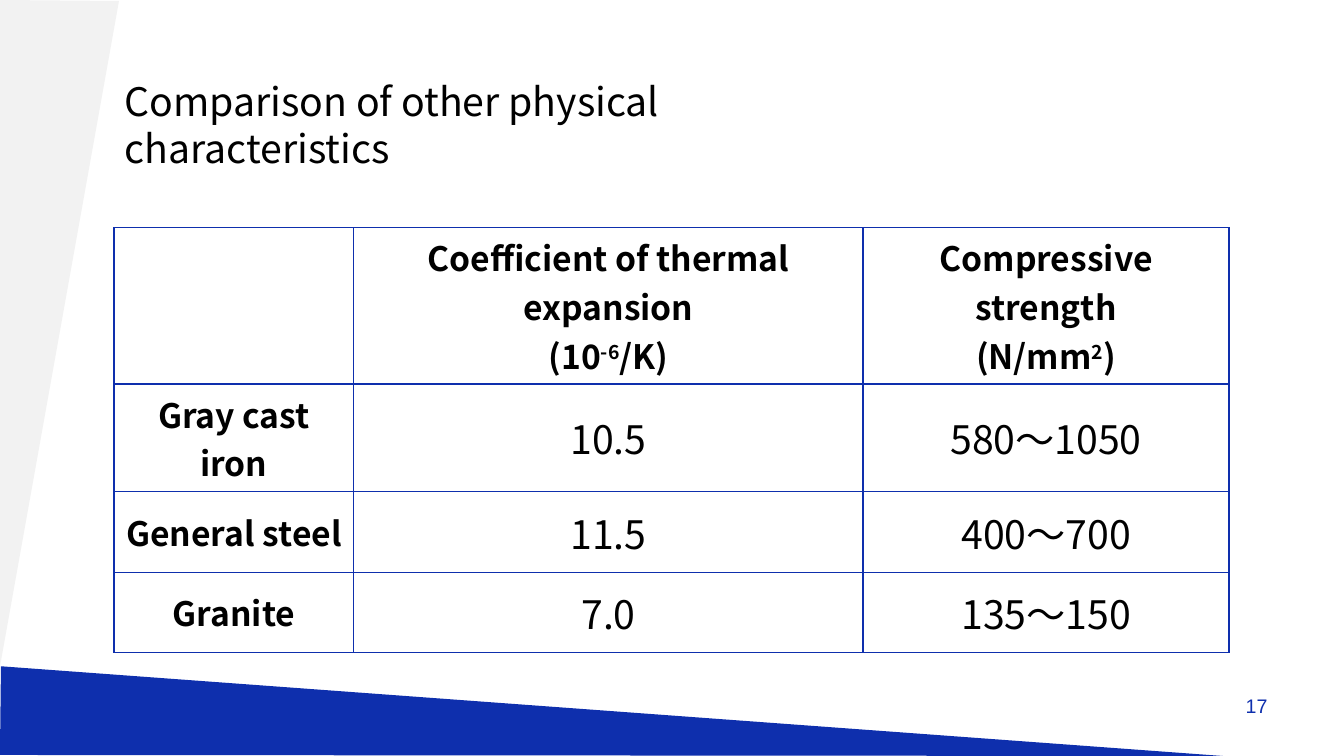
from dataclasses import dataclass

from lxml import etree
from pptx import Presentation
from pptx import util as u
from pptx.dml.color import RGBColor
from pptx.enum import text
from pptx.oxml import ns


@dataclass(frozen=True)
class Theme:
    blue: str = "0E2FAD"
    gray: str = "F2F2F2"
    ink: str = "000000"
    font: str = "Noto Sans CJK JP"
    plain: str = "Arial"
    big: int = 28
    head: int = 24
    small: int = 14
    line: int = 1


class Page:
    def __init__(self, deck, theme):
        self.theme = theme
        self.slide = deck.slides.add_slide(deck.slide_layouts[6])

    def run(self, para, words, size, color, font, bold=False, base=0):
        run = para.add_run()
        run.text = words
        run.font.size = u.Pt(size)
        run.font.bold = bold
        run.font.name = font
        run.font.color.rgb = RGBColor.from_string(color)
        props = run._r.get_or_add_rPr()
        east = etree.Element(ns.qn("a:ea"), typeface=font)
        props.find(ns.qn("a:latin")).addnext(east)
        if base:
            props.set("baseline", str(base * 1000))

    def wedge(self, points, color):
        start, *rest = [(u.Inches(x), u.Inches(y)) for x, y in points]
        pen = self.slide.shapes.build_freeform(*start)
        pen.add_line_segments(rest, close=True)
        shape = pen.convert_to_shape()
        shape.shadow.inherit = False
        shape.fill.solid()
        shape.fill.fore_color.rgb = RGBColor.from_string(color)
        shape.line.fill.background()

    def label(self, box, words, size, color, font,
              align=text.PP_ALIGN.LEFT):
        shape = self.slide.shapes.add_textbox(*map(u.Inches, box))
        frame = shape.text_frame
        frame.word_wrap = True
        para = frame.paragraphs[0]
        para.alignment = align
        self.run(para, words, size, color, font)

    def border(self, cell):
        props = cell._tc.get_or_add_tcPr()
        for spot, side in enumerate(("lnL", "lnR", "lnT", "lnB")):
            line = etree.Element(ns.qn(f"a:{side}"), w=str(u.Pt(self.theme.line)))
            fill = etree.SubElement(line, ns.qn("a:solidFill"))
            etree.SubElement(fill, ns.qn("a:srgbClr"), val=self.theme.blue)
            props.insert(spot, line)

    def cell(self, cell, lines, bold):
        cell.fill.background()
        cell.vertical_anchor = text.MSO_ANCHOR.MIDDLE
        self.border(cell)
        size = self.theme.head if bold else self.theme.big
        frame = cell.text_frame
        for spot, parts in enumerate(lines):
            para = frame.add_paragraph() if spot else frame.paragraphs[0]
            para.alignment = text.PP_ALIGN.CENTER
            for words, base in parts:
                self.run(para, words, size, self.theme.ink, self.theme.font,
                         bold, base)

    def table(self, left, top, cols, rows, data):
        box = map(u.Inches, (left, top, sum(cols), sum(rows)))
        grid = self.slide.shapes.add_table(len(rows), len(cols), *box).table
        grid.first_row = grid.horz_banding = False
        for col, width in zip(grid.columns, cols):
            col.width = u.Inches(width)
        for row, high in zip(grid.rows, rows):
            row.height = u.Inches(high)
        for r, line in enumerate(data):
            for c, lines in enumerate(line):
                self.cell(grid.cell(r, c), lines, bold=r == 0 or c == 0)


def main():
    deck = Presentation()
    deck.slide_width, deck.slide_height = u.Inches(13.33), u.Inches(7.5)
    theme = Theme()
    page = Page(deck, theme)

    # Background wedges
    page.wedge([(12.13, 7.5), (0, 7.49), (0.01, 6.61)], theme.blue)
    page.wedge([(0, 6.61), (0, 0), (1.18, 0.01)], theme.gray)

    # Page number
    page.label((9.56, 6.83, 3.11, 0.52), "17", theme.small, theme.blue,
               theme.plain, align=text.PP_ALIGN.RIGHT)

    # Materials table: each cell is a list of lines, each line a list of
    # (words, raise in percent)
    heads = [
        [],
        [[("Coefficient of thermal expansion", 0)],
         [("(10", 0), ("-6", 30), ("/K)", 0)]],
        [[("Compressive strength", 0)],
         [("(N/mm", 0), ("2", 30), (")", 0)]],
    ]
    stuff = [
        ("Gray cast iron", "10.5", "580～1050"),
        ("General steel", "11.5", "400～700"),
        ("Granite", "7.0", "135～150"),
    ]
    body = [[[[(words, 0)]] for words in row] for row in stuff]
    page.table(1.13, 2.26, (2.38, 5.05, 3.63), (1.55, 1.07, 0.8, 0.79),
               [heads] + body)

    # Title
    page.label((1.14, 0.72, 7.54, 0.57),
               "Comparison of other physical characteristics",
               theme.big, theme.ink, theme.font)

    deck.save("out.pptx")


if __name__ == "__main__":
    main()
